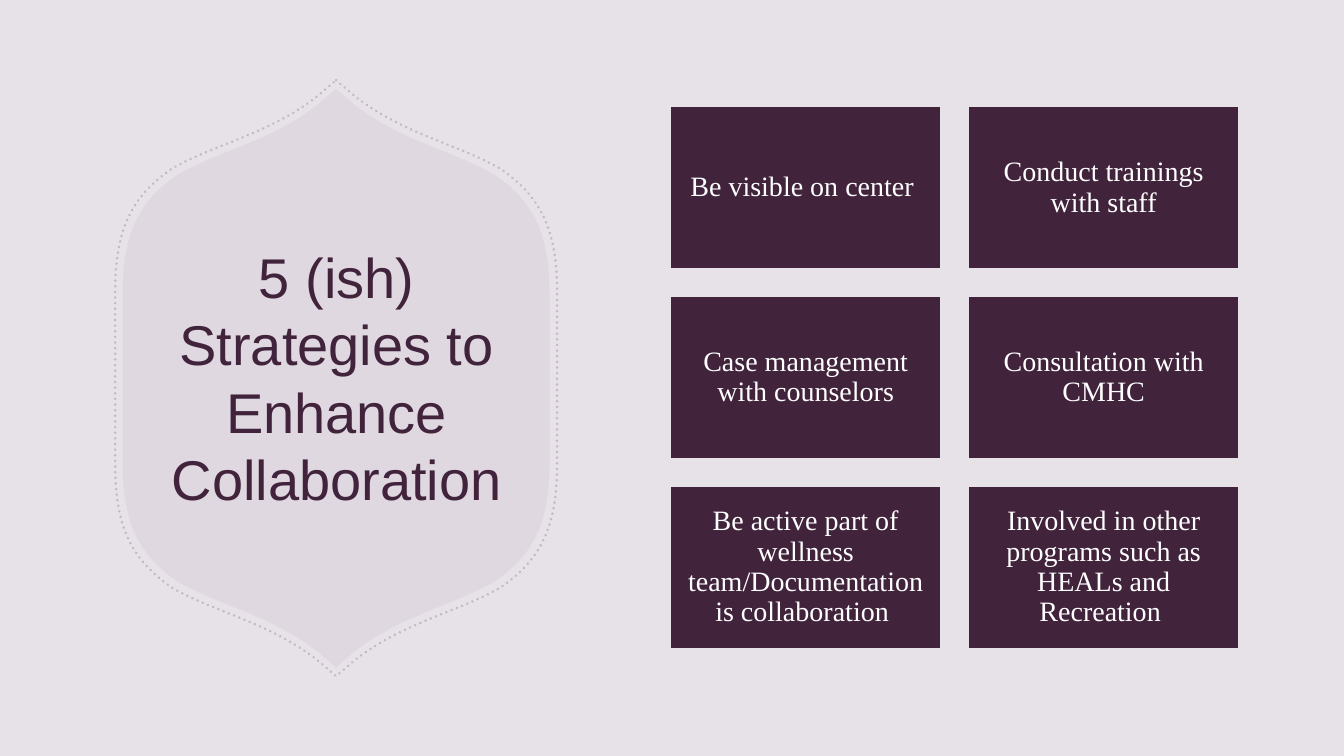
from lxml import etree
from pptx import Presentation
from pptx import util as u
from pptx.dml.color import RGBColor
from pptx.enum import dml, shapes, text
from pptx.oxml.ns import qn

COLORS = {"back": "E7E2E8", "plum": "41243C", "mauve": "B2A2B5", "white": "FFFFFF"}

TITLE = "5 (ish) Strategies to Enhance Collaboration "
STRATEGIES = [
    "Be visible on center ",
    "Conduct trainings with staff",
    "Case management with counselors",
    "Consultation with CMHC",
    "Be active part of wellness team/Documentation is collaboration ",
    "Involved in other programs such as HEALs and Recreation ",
]

BADGE_CENTER = (8.47, 9.53)
BADGE_QUARTER = [
    (0, -7.29), (0.48, -6.88),
    (1.65, -5.97), (2.97, -5.72), (3.99, -5.13),
    (4.95, -4.47), (5.38, -3.68), (5.38, -2.13),
]
CURVE_STARTS = (2, 5, 9, 12)


def rgb(name):
    """Return the palette colour called name."""
    return RGBColor.from_string(COLORS[name])


def write(sp, words, font, size, color, spacing=1.0, after=0, inset=None):
    """Put one centred, formatted paragraph into a shape."""
    tf = sp.text_frame
    tf.word_wrap = True
    tf.auto_size = text.MSO_AUTO_SIZE.NONE
    tf.vertical_anchor = text.MSO_ANCHOR.MIDDLE
    if inset is not None:
        tf.margin_left = tf.margin_right = tf.margin_top = tf.margin_bottom = u.Cm(inset)
    p = tf.paragraphs[0]
    p.alignment = text.PP_ALIGN.CENTER
    p.line_spacing = spacing
    p.space_after = u.Pt(after)
    r = p.add_run()
    r.text = words
    r.font.name = font
    r.font.size = u.Pt(size)
    r.font.color.rgb = rgb(color)


def badge_points():
    """Return the badge outline, mirrored from its upper right quarter."""
    right = BADGE_QUARTER + [(x, -y) for x, y in reversed(BADGE_QUARTER)]
    return right + [(-x, y) for x, y in reversed(right)][1:-1]


def round_off(sp):
    """Turn the control points of the badge outline into cubic curves."""
    lines = list(sp._element.spPr.iter(qn("a:lnTo")))
    half = 2 * len(BADGE_QUARTER) - 1
    for start in [k + side for side in (0, half) for k in CURVE_STARTS]:
        first, *others = lines[start - 1:start + 2]
        curve = etree.Element(qn("a:cubicBezTo"))
        first.addprevious(curve)
        for line in (first, *others):
            curve.append(line[0])
            line.getparent().remove(line)


def set_opacity(sp, percent):
    """Make the explicit colours of a shape partly transparent."""
    for clr in sp._element.spPr.iter(qn("a:srgbClr")):
        etree.SubElement(clr, qn("a:alpha")).set("val", str(percent * 1000))


class Deck:
    """Hold the presentation, its style and the current slide."""

    def __init__(self):
        """Start a wide presentation with one title slide."""
        self.prs = Presentation()
        self.prs.slide_width, self.prs.slide_height = u.Cm(33.87), u.Cm(19.05)
        self.s = self.prs.slides.add_slide(self.prs.slide_layouts[5])
        fill = self.s.background.fill
        fill.solid()
        fill.fore_color.rgb = rgb("back")

    def badge(self, scale_x=1, scale_y=1, outline=False):
        """Draw the pointed badge, filled or as a dotted outline."""
        cx, cy = BADGE_CENTER
        pts = [(u.Cm(cx + x * scale_x), u.Cm(cy + y * scale_y)) for x, y in badge_points()]
        builder = self.s.shapes.build_freeform(*pts[0])
        builder.add_line_segments(pts[1:], close=True)
        sp = builder.convert_to_shape()
        round_off(sp)
        sp.shadow.inherit = False
        if outline:
            sp.fill.background()
            sp.line.color.rgb = rgb("mauve")
            sp.line.width = u.Pt(2)
            sp.line.dash_style = dml.MSO_LINE.ROUND_DOT
            sp._element.spPr.find(qn("a:ln")).set("cap", "rnd")
        else:
            sp.fill.solid()
            sp.fill.fore_color.rgb = rgb("mauve")
            sp.line.fill.background()
        set_opacity(sp, 65 if outline else 15)

    def title(self, words, left, top, width, height):
        """Place the title in front of what is already drawn."""
        sp = self.s.shapes.title
        sp.left, sp.top, sp.width, sp.height = map(u.Cm, (left, top, width, height))
        write(sp, words, "Arial", 40, "plum")
        self.s.shapes._spTree.append(sp._element)

    def card(self, words, left, top, width, height):
        """Draw one strategy card."""
        sp = self.s.shapes.add_shape(
            shapes.MSO_SHAPE.RECTANGLE, *map(u.Cm, (left, top, width, height)))
        sp.shadow.inherit = False
        sp.fill.solid()
        sp.fill.fore_color.rgb = rgb("plum")
        sp.line.color.rgb = rgb("back")
        sp.line.width = u.Pt(1)
        write(sp, words, "Times New Roman", 20, "white", spacing=0.9, after=7, inset=0.2)


def main():
    """Build and save the slide."""
    deck = Deck()
    deck.badge()
    deck.badge(1.035, 1.03, outline=True)
    deck.title(TITLE, 4.06, 5.36, 8.84, 8.28)
    for i, words in enumerate(STRATEGIES):
        row, col = divmod(i, 2)
        deck.card(words, 16.89 + 7.51 * col, 2.69 + 4.78 * row, 6.83, 4.09)
    deck.prs.save("out.pptx")


if __name__ == "__main__":
    main()
